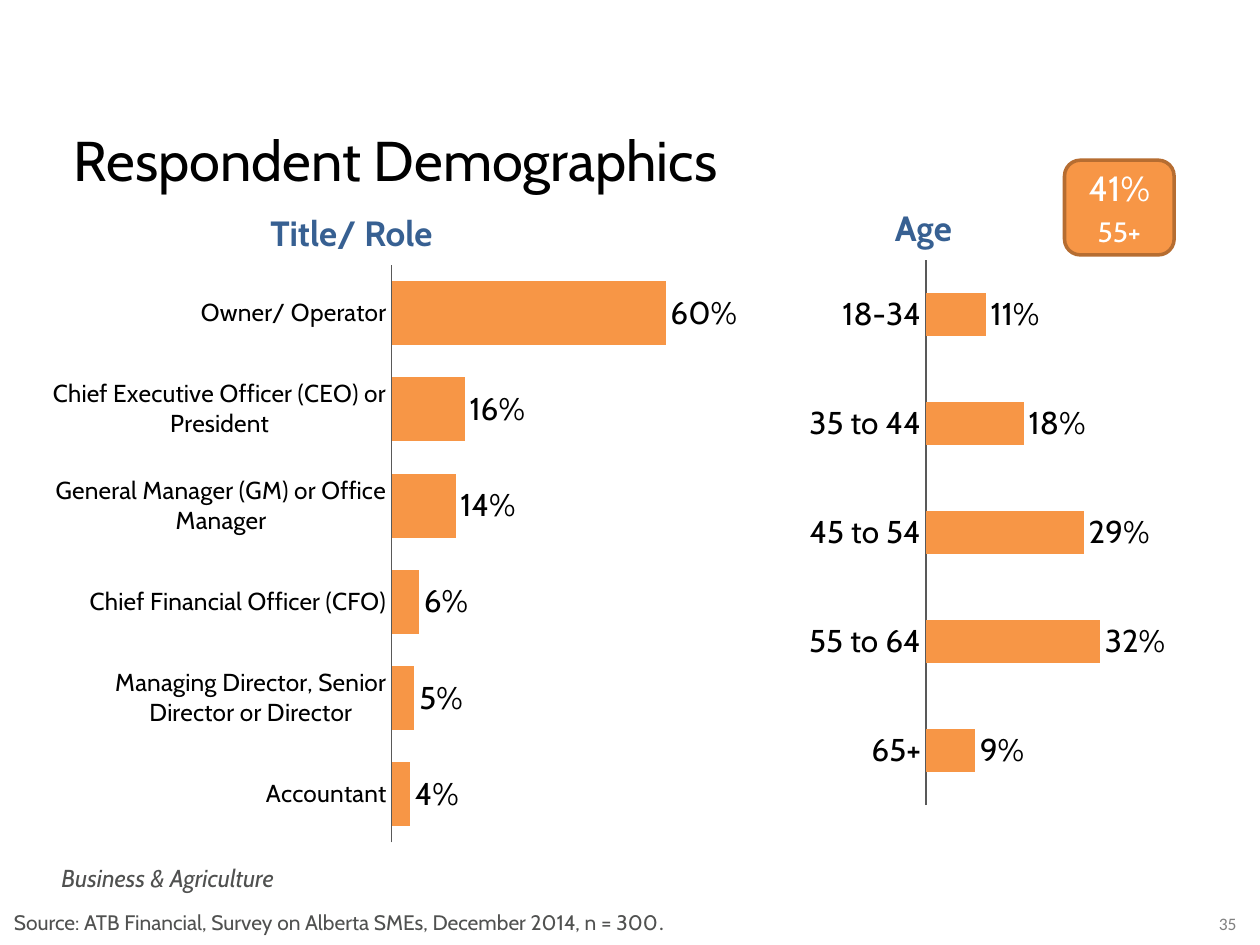
from dataclasses import dataclass, field

import pptx
import pptx.chart.data
import pptx.dml.color
import pptx.enum.chart
import pptx.enum.shapes
import pptx.enum.text
import pptx.oxml
import pptx.oxml.ns
import pptx.util

Cm = pptx.util.Cm
Pt = pptx.util.Pt
ALIGN = pptx.enum.text.PP_ALIGN
COLOURS = {
    "bar": "F79646",
    "callout_edge": "B66D31",
    "heading": "376092",
    "body": "505150",
    "number": "808080",
    "axis": "595959",
    "black": "000000",
    "white": "FFFFFF",
}


@dataclass
class Label:
    runs: list[tuple[str, str]]
    box: tuple[float, float, float, float]
    size: float
    colour: str
    align: ALIGN = ALIGN.LEFT
    style: dict[str, bool] = field(default_factory=dict)


@dataclass
class BarPanel:
    box: tuple[float, float, float, float]
    shares: dict[str, float]
    plot: dict[str, float]
    maximum: float
    gap: int
    category_size: float


LABELS = [
    Label([("35", "Calibri")], (24.13, 18.29, 1.24, 0.69), 10, "number", ALIGN.CENTER),
    Label([("Business & Agriculture", "Cabin")], (0.99, 17.27, 7.14, 0.86), 14, "body",
          style={"italic": True}),
    Label([("Respondent Demographics", "Cabin")], (1.24, 2.41, 14.83, 1.63), 32, "black"),
    Label([("Title/ Role", "Cabin")], (4.24, 4.14, 5.69, 1.12), 20, "heading",
          ALIGN.CENTER, {"bold": True}),
    Label([("Age", "Cabin")], (15.77, 4.04, 5.69, 1.12), 20, "heading",
          ALIGN.CENTER, {"bold": True}),
    Label([("Source: ATB Financial, Survey on Alberta SMEs, December 2014, n = 300", "Cabin"),
           (".", "Calibri")], (0.03, 18.21, 23.65, 0.76), 12, "body"),
]

PANELS = [
    BarPanel(
        (0.71, 5.33, 14.15, 12.14),
        {
            "Owner/ Operator": 0.6,
            "Chief Executive Officer (CEO) or President": 0.16,
            "General Manager (GM) or Office Manager": 0.14,
            "Chief Financial Officer (CFO)": 0.06,
            "Managing Director, Senior Director or Director": 0.05,
            "Accountant": 0.04,
        },
        {"x": 0.51, "y": 0, "w": 0.49, "h": 0.96}, 0.75, 50, 14,
    ),
    BarPanel(
        (13.18, 5.23, 10.97, 11.46),
        {"18-34": 0.11, "35 to 44": 0.18, "45 to 54": 0.29, "55 to 64": 0.32, "65+": 0.09},
        {"x": 0.5, "y": 0, "w": 0.5, "h": 0.96}, 0.5, 150, 18,
    ),
]


def rgb(name: str) -> pptx.dml.color.RGBColor:
    return pptx.dml.color.RGBColor.from_string(COLOURS[name])


def apply(target, values: dict) -> None:
    for attribute, value in values.items():
        setattr(target, attribute, value)


def set_font(font, size: float, colour: str, name: str = "Cabin", **style: bool) -> None:
    apply(font, {"name": name, "size": Pt(size), **style})
    font.color.rgb = rgb(colour)


def place(box: tuple[float, float, float, float]) -> list[pptx.util.Length]:
    return [Cm(length) for length in box]


def add_label(slide, label: Label) -> None:
    frame = slide.shapes.add_textbox(*place(label.box)).text_frame
    frame.word_wrap = True
    paragraph = frame.paragraphs[0]
    paragraph.alignment = label.align
    for text, font_name in label.runs:
        run = paragraph.add_run()
        run.text = text
        set_font(run.font, label.size, label.colour, font_name, **label.style)


def set_plot_area(chart, plot: dict[str, float]) -> None:
    area = chart.element.find(".//" + pptx.oxml.ns.qn("c:plotArea"))
    for old_layout in area.findall(pptx.oxml.ns.qn("c:layout")):
        area.remove(old_layout)
    sizes = "".join(f'<c:{key} val="{value}"/>' for key, value in plot.items())
    area.insert(0, pptx.oxml.parse_xml(
        f'<c:layout {pptx.oxml.ns.nsdecls("c")}><c:manualLayout>'
        '<c:layoutTarget val="inner"/><c:xMode val="edge"/><c:yMode val="edge"/>'
        f"{sizes}</c:manualLayout></c:layout>"))


def add_bar_panel(slide, panel: BarPanel) -> None:
    shares = pptx.chart.data.CategoryChartData(number_format="0%")
    shares.categories = list(panel.shares)
    shares.add_series("Series 1", list(panel.shares.values()))
    chart = slide.shapes.add_chart(
        pptx.enum.chart.XL_CHART_TYPE.BAR_CLUSTERED, *place(panel.box), shares).chart
    apply(chart, {"has_title": False, "has_legend": False})
    set_font(chart.font, panel.category_size, "black")
    set_plot_area(chart, panel.plot)

    no_tick = pptx.enum.chart.XL_TICK_MARK.NONE
    apply(chart.category_axis, {
        "reverse_order": True, "has_major_gridlines": False,
        "major_tick_mark": no_tick, "minor_tick_mark": no_tick})
    chart.category_axis.format.line.color.rgb = rgb("axis")
    chart.category_axis.format.line.width = Pt(0.75)
    apply(chart.value_axis, {
        "visible": False, "has_major_gridlines": False,
        "minimum_scale": 0, "maximum_scale": panel.maximum})

    bars = chart.plots[0]
    apply(bars, {"gap_width": panel.gap, "vary_by_categories": False, "has_data_labels": True})
    apply(bars.data_labels, {
        "show_value": True, "number_format": "0%", "number_format_is_linked": False,
        "position": pptx.enum.chart.XL_LABEL_POSITION.OUTSIDE_END})
    set_font(bars.data_labels.font, 18, "black")
    fill = bars.series[0].format.fill
    fill.solid()
    fill.fore_color.rgb = rgb("bar")


def add_callout(slide, box: tuple[float, float, float, float],
                lines: list[tuple[str, float]]) -> None:
    callout = slide.shapes.add_shape(
        pptx.enum.shapes.MSO_SHAPE.ROUNDED_RECTANGLE, *place(box))
    callout.shadow.inherit = False
    callout.fill.solid()
    callout.fill.fore_color.rgb = rgb("bar")
    callout.line.color.rgb = rgb("callout_edge")
    callout.line.width = Pt(2)
    frame = callout.text_frame
    apply(frame, {"word_wrap": True, "vertical_anchor": pptx.enum.text.MSO_ANCHOR.MIDDLE})
    for index, (text, size) in enumerate(lines):
        paragraph = frame.add_paragraph() if index else frame.paragraphs[0]
        paragraph.alignment = ALIGN.CENTER
        if index:
            paragraph.space_before = Pt(size * 0.2)
        run = paragraph.add_run()
        run.text = text
        set_font(run.font, size, "white")


def main() -> None:
    deck = pptx.Presentation()
    apply(deck, {"slide_width": Cm(25.4), "slide_height": Cm(19.05)})
    slide = deck.slides.add_slide(deck.slide_layouts[6])
    for panel in PANELS:
        add_bar_panel(slide, panel)
    add_callout(slide, (21.46, 3.23, 2.21, 1.91), [("41%", 20), ("55+", 16)])
    for label in LABELS:
        add_label(slide, label)
    deck.save("out.pptx")


if __name__ == "__main__":
    main()
